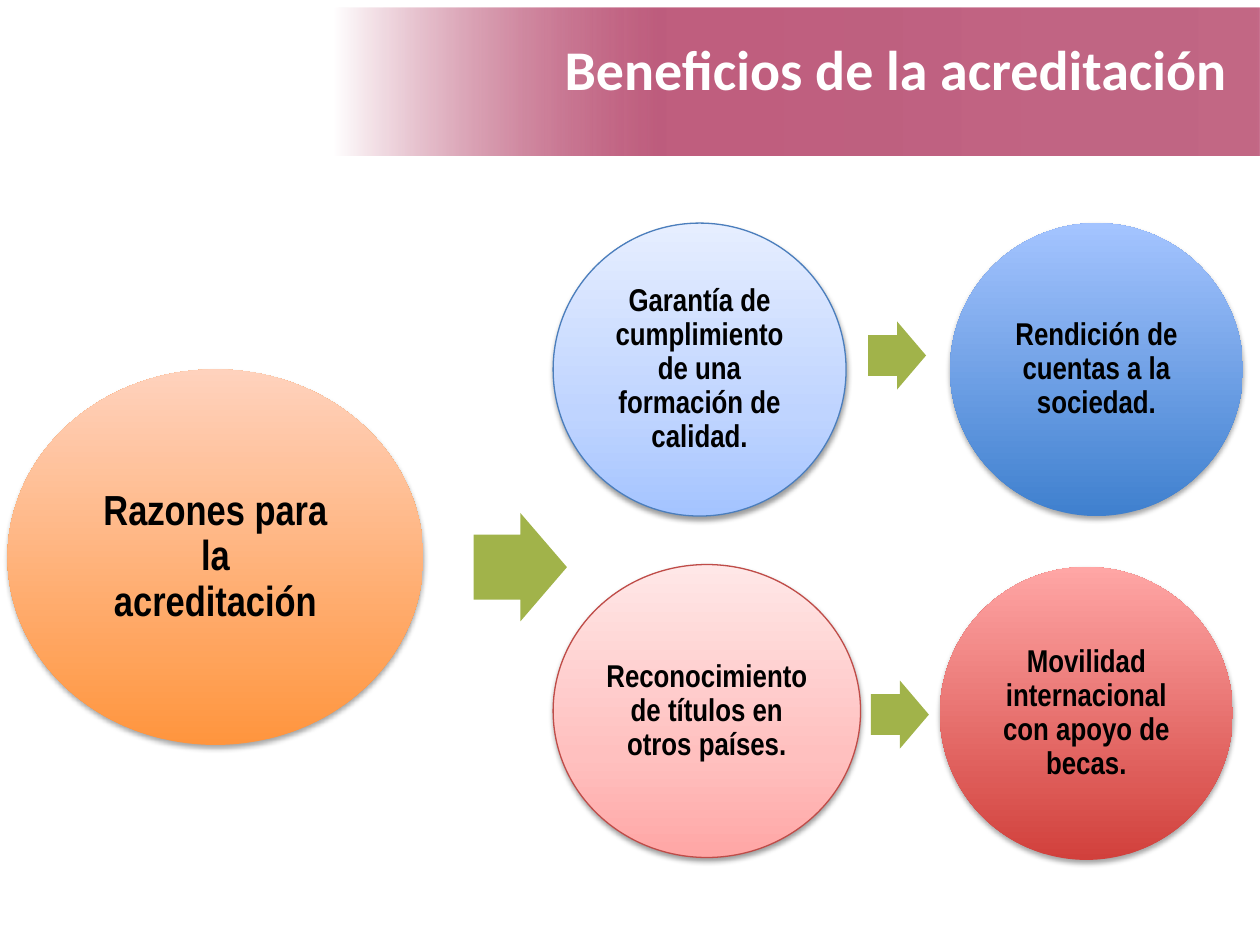
from lxml.etree import SubElement
from pptx import Presentation
from pptx.dml.color import RGBColor
from pptx.enum.shapes import MSO_SHAPE
from pptx.enum.text import MSO_ANCHOR, MSO_AUTO_SIZE, PP_ALIGN
from pptx.oxml.ns import qn
from pptx.util import Pt

COLORS = {
    "white": "FFFFFF", "black": "000000", "band": "990033", "arrow": "A1B34A",
    "orange": "FF953E", "peach": "FFD2BD",
    "blue": "3F80CE", "sky": "A4C4FF", "pale_sky": "BFD4FF", "ice": "E6EEFF",
    "blue_line": "4B7EBC",
    "red": "D1403C", "rose": "FFA6A5", "pale_rose": "FFC0BF", "blush": "FFE7E7",
    "red_line": "BF4C48",
}
UPWARD, LEFTWARD = 90, 180


def rgb(name):
    return RGBColor.from_string(COLORS[name])


def add_color(parent, name, opacity):
    color = SubElement(parent, qn("a:srgbClr"), val=COLORS[name])
    if opacity < 100:
        SubElement(color, qn("a:alpha"), val=str(opacity * 1000))


def set_gradient(shape, stops, angle):
    """Fill with (position, color, opacity) stops, all in percent."""
    shape.fill.gradient()
    shape.fill.gradient_angle = angle
    stop_list = shape.element.spPr.find(".//" + qn("a:gsLst"))
    stop_list.clear()
    for position, name, opacity in stops:
        stop = SubElement(stop_list, qn("a:gs"), pos=str(position * 1000))
        add_color(stop, name, opacity)


def set_shadow(shape, name, opacity):
    shape.shadow.inherit = False
    effects = shape.element.spPr.find(qn("a:effectLst"))
    shadow = SubElement(effects, qn("a:outerShdw"), blurRad=str(Pt(3.1)),
                        dist=str(Pt(1.8)), dir="5400000", rotWithShape="0")
    add_color(shadow, name, opacity)


def format_text(text_frame, alignment, font_name, size, color):
    text_frame.word_wrap = True
    text_frame.auto_size = MSO_AUTO_SIZE.NONE
    text_frame.vertical_anchor = MSO_ANCHOR.MIDDLE
    paragraph = text_frame.paragraphs[0]
    paragraph.alignment = alignment
    for run in paragraph.runs:
        run.font.name = font_name
        run.font.size = Pt(size)
        run.font.bold = True
        run.font.color.rgb = rgb(color)


def add_header(slide, left, top, width, height):
    band = slide.shapes.add_shape(MSO_SHAPE.RECTANGLE, Pt(left), Pt(top),
                                  Pt(width), Pt(height))
    set_gradient(band, [(0, "band", 59), (65, "band", 63), (100, "white", 100)],
                 LEFTWARD)
    band.line.fill.background()
    set_shadow(band, "white", 35)

    title = slide.shapes.title
    title.element.addprevious(band.element)
    title.left, title.top = Pt(left + 103), Pt(top + 10.7)
    title.width, title.height = Pt(414.7), Pt(47.5)
    title.text_frame.text = "Beneficios de la acreditación"
    format_text(title.text_frame, PP_ALIGN.RIGHT, "Calibri", 32, "white")


def add_circle(slide, box, text, colors, line=None, size=18, inset=2):
    left, top, width, height = map(Pt, box)
    circle = slide.shapes.add_shape(MSO_SHAPE.OVAL, left, top, width, height)
    positions = (0, 100) if len(colors) == 2 else (0, 35, 100)
    set_gradient(circle, [(position, color, 100)
                          for position, color in zip(positions, colors)], UPWARD)
    if line:
        circle.line.color.rgb = rgb(line)
        circle.line.width = Pt(0.75)
    else:
        circle.line.fill.background()
    set_shadow(circle, "black", 38 if line else 35)

    text_frame = circle.text_frame
    text_frame.text = text
    text_frame.margin_left = text_frame.margin_right = Pt(inset)
    text_frame.margin_top = text_frame.margin_bottom = Pt(inset)
    text_frame.paragraphs[0].line_spacing = 0.9
    format_text(text_frame, PP_ALIGN.CENTER, "Arial Narrow", size, "black")


def add_arrow(slide, left, top, width, height):
    arrow = slide.shapes.add_shape(MSO_SHAPE.RIGHT_ARROW, Pt(left), Pt(top),
                                   Pt(width), Pt(height))
    arrow.adjustments[0] = 0.6
    arrow.adjustments[1] = 0.5
    arrow.fill.solid()
    arrow.fill.fore_color.rgb = rgb("arrow")
    arrow.line.fill.background()
    arrow.shadow.inherit = False


def add_diagram(slide, left, top):
    """Lead circle on the left, then two rows of cause and effect."""
    diameter = 167.4
    add_circle(slide, (left, top + 83.6, 237.6, 214.6),
               "Razones para la acreditación", ("orange", "peach"),
               size=24, inset=18.5)
    add_arrow(slide, left + 266.4, top + 165.6, 53.3, 62)

    cause_left = left + 311.8
    add_circle(slide, (cause_left, top, diameter, diameter),
               "Garantía de cumplimiento de una formación de calidad.",
               ("sky", "pale_sky", "ice"), "blue_line")
    add_circle(slide, (left + 538.6, top, diameter, diameter),
               "Rendición de cuentas a la sociedad.", ("blue", "sky"))
    add_circle(slide, (cause_left, top + 195.1, 175.7, diameter),
               "Reconocimiento de títulos en otros países.",
               ("rose", "pale_rose", "blush"), "red_line")
    add_circle(slide, (left + 532.8, top + 196.5, diameter, diameter),
               "Movilidad internacional con apoyo de becas.", ("red", "rose"))
    for arrow_left, arrow_top in ((491.8, 56.2), (493.4, 261.4)):
        add_arrow(slide, left + arrow_left, top + arrow_top, 33.1, 38.9)


def main():
    presentation = Presentation()
    presentation.slide_width, presentation.slide_height = Pt(720), Pt(540)
    slide = presentation.slides.add_slide(presentation.slide_layouts[5])
    add_header(slide, 190.8, 4.4, 528.8, 84.3)
    add_diagram(slide, 4.3, 127.5)
    presentation.save("out.pptx")


if __name__ == "__main__":
    main()
